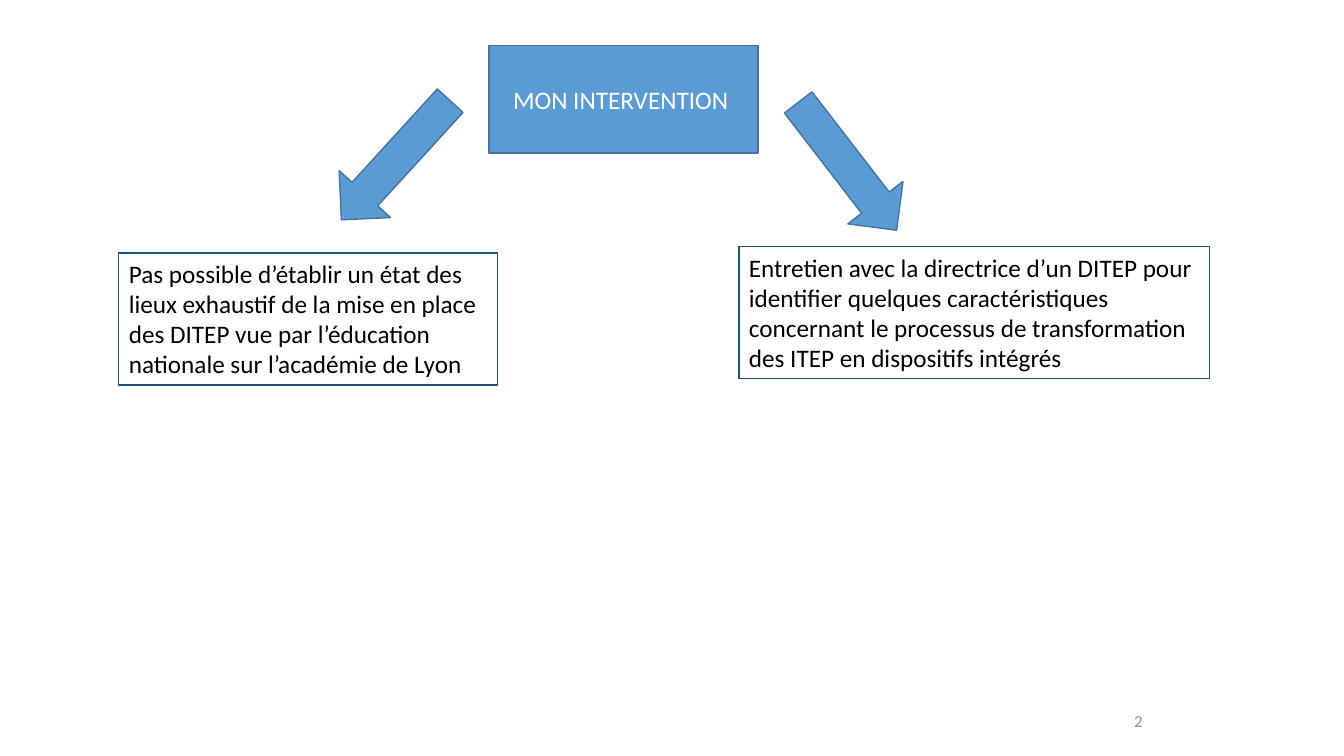
from pptx import Presentation
from pptx.dml.color import RGBColor
from pptx.enum import shapes, text
from pptx.util import Inches, Pt

FONT = "Calibri"
RECT = shapes.MSO_SHAPE.RECTANGLE
ARROW = shapes.MSO_SHAPE.DOWN_ARROW
MID, TOP = text.MSO_ANCHOR.MIDDLE, text.MSO_ANCHOR.TOP
LEFT, CENTER, RIGHT = (text.PP_ALIGN.LEFT, text.PP_ALIGN.CENTER,
                       text.PP_ALIGN.RIGHT)

SOLID = {"fill": "5B9BD5", "line": "43739E", "width": 1}
FRAME = {"fill": None, "line": "1F4E79", "width": 0.75}

HEAD = ("MON INTERVENTION ", (4.85, 0.45, 2.67, 1.07))
ARROWS = [  # left, top, rotation
    (3.58, 0.79, 42.4),
    (8.06, 0.85, 322.4),
]
ARROW_SIZE = (0.69, 1.6)
NOTES = [
    ("Pas possible d’établir un état des lieux exhaustif de la mise en place "
     "des DITEP vue par l’éducation nationale sur l’académie de Lyon",
     (1.18, 2.51, 3.76, 1.31)),
    ("Entretien avec la directrice d’un DITEP pour identifier quelques "
     "caractéristiques concernant le processus de transformation des ITEP "
     "en dispositifs intégrés",
     (7.33, 2.45, 4.67, 1.31)),
]
PAGE = ("2", (9.18, 6.95, 2.25, 0.4))


def color(value):
    return RGBColor.from_string(value)


def draw(slide, kind, box, look):
    shape = slide.shapes.add_shape(kind, *map(Inches, box))
    shape.shadow.inherit = False
    if look["fill"]:
        shape.fill.solid()
        shape.fill.fore_color.rgb = color(look["fill"])
    else:
        shape.fill.background()
    shape.line.color.rgb = color(look["line"])
    shape.line.width = Pt(look["width"])
    return shape


def write(shape, words, ink, align, anchor, size=18):
    frame = shape.text_frame
    frame.word_wrap = True
    frame.vertical_anchor = anchor
    para = frame.paragraphs[0]
    para.alignment = align
    run = para.add_run()
    run.text = words
    for name, value in {"name": FONT, "size": Pt(size)}.items():
        setattr(run.font, name, value)
    run.font.color.rgb = color(ink)


def main():
    deck = Presentation()
    deck.slide_width, deck.slide_height = Inches(13.33), Inches(7.5)
    slide = deck.slides.add_slide(deck.slide_layouts.get_by_name("Blank"))

    words, box = PAGE
    page = slide.shapes.add_textbox(*map(Inches, box))
    write(page, words, "8C8C8C", RIGHT, MID, 12)

    words, box = HEAD
    write(draw(slide, RECT, box, SOLID), words, "FFFFFF", CENTER, MID)

    for left, top, turn in ARROWS:
        draw(slide, ARROW, (left, top, *ARROW_SIZE), SOLID).rotation = turn

    for words, box in NOTES:
        note = draw(slide, RECT, box, FRAME)
        write(note, words, "000000", LEFT, TOP)
        note.text_frame.auto_size = text.MSO_AUTO_SIZE.SHAPE_TO_FIT_TEXT

    deck.save("out.pptx")


if __name__ == "__main__":
    main()
